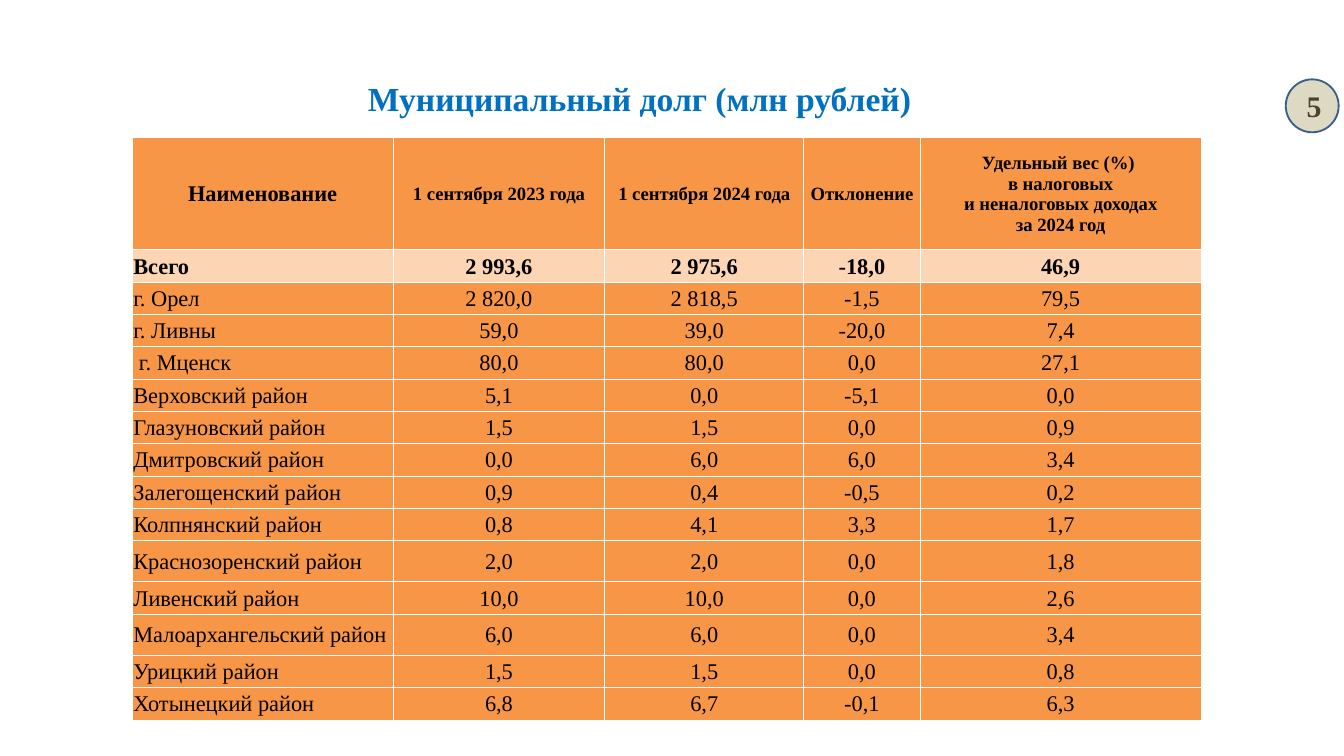
from copy import deepcopy

from lxml.etree import SubElement
from pptx import Presentation
from pptx.dml.color import RGBColor
from pptx.enum.shapes import MSO_SHAPE as Shape
from pptx.enum.text import MSO_ANCHOR as Anchor, PP_ALIGN as Align
from pptx.oxml.ns import qn
from pptx.util import Cm, Pt

FONT = "Times New Roman"
ORANGE, PEACH = "F79646", "FCD5B5"
TITLE = "Муниципальный долг (млн рублей)"
PAGE_NUMBER = "5"
HEADERS = [
    "Наименование", "1 сентября 2023 года", "1 сентября 2024 года", "Отклонение",
    "Удельный вес (%) \nв налоговых\nи неналоговых доходах\nза 2024 год",
]
DEBTS = [
    ("Всего", "2 993,6", "2 975,6", "-18,0", "46,9"),
    ("г. Орел", "2 820,0", "2 818,5", "-1,5", "79,5"),
    ("г. Ливны", "59,0", "39,0", "-20,0", "7,4"),
    (" г. Мценск", "80,0", "80,0", "0,0", "27,1"),
    ("Верховский район", "5,1", "0,0", "-5,1", "0,0"),
    ("Глазуновский район", "1,5", "1,5", "0,0", "0,9"),
    ("Дмитровский район", "0,0", "6,0", "6,0", "3,4"),
    ("Залегощенский район", "0,9", "0,4", "-0,5", "0,2"),
    ("Колпнянский район", "0,8", "4,1", "3,3", "1,7"),
    ("Краснозоренский район", "2,0", "2,0", "0,0", "1,8"),
    ("Ливенский район", "10,0", "10,0", "0,0", "2,6"),
    ("Малоархангельский район", "6,0", "6,0", "0,0", "3,4"),
    ("Урицкий район", "1,5", "1,5", "0,0", "0,8"),
    ("Хотынецкий район", "6,8", "6,7", "-0,1", "6,3"),
]
COLUMN_WIDTHS = [4.93, 4, 3.76, 2.2, 5.31]
HEADER_HEIGHT, ROW_HEIGHT, TALL_HEIGHT = 2.12, 0.61, 0.78
TALL_ROWS = {"Краснозоренский район", "Малоархангельский район"}


def color(value):
    return RGBColor.from_string(value)


def write(frame, text, size=12, ink="000000", bold=False, align=Align.CENTER):
    para = frame.paragraphs[0]
    para.text = text
    para.alignment = align
    for span in para.runs:
        span.font.name = FONT
        span.font.size = Pt(size)
        span.font.bold = bold
        span.font.color.rgb = color(ink)
    # Line breaks need the run format too, or they get the default height
    for line_break in para._p.findall(qn("a:br")):
        line_break.append(deepcopy(para.runs[0]._r.rPr))


def style_cell(cell, fill):
    """Set the thin white borders, the fill and the narrow margins."""
    properties = cell._tc.get_or_add_tcPr()
    for side in ("lnL", "lnR", "lnT", "lnB"):
        border = SubElement(properties, qn(f"a:{side}"), w=str(Pt(0.5)))
        SubElement(SubElement(border, qn("a:solidFill")), qn("a:srgbClr"), val="FFFFFF")
    cell.fill.solid()
    cell.fill.fore_color.rgb = color(fill)
    cell.vertical_anchor = Anchor.MIDDLE
    cell.margin_left = cell.margin_right = cell.margin_top = Cm(0.02)
    cell.margin_bottom = 0


def add_title(page):
    title = page.shapes.title
    title.left, title.top, title.width, title.height = Cm(6.7), Cm(1.35), Cm(13.6), Cm(1.02)
    title.text_frame.vertical_anchor = Anchor.TOP
    write(title.text_frame, TITLE, size=18, ink="0070C0", bold=True, align=Align.LEFT)


def add_page_number(page):
    badge = page.shapes.add_shape(Shape.OVAL, Cm(24.3), Cm(1.5), Cm(1), Cm(1))
    badge.shadow.inherit = False
    badge.fill.solid()
    badge.fill.fore_color.rgb = color("DDD9C3")
    badge.line.color.rgb = color("3A5F8C")
    badge.line.width = Pt(1)
    badge.text_frame.vertical_anchor = Anchor.MIDDLE
    write(badge.text_frame, PAGE_NUMBER, size=16, ink="4A452A", bold=True)


def add_debt_table(page):
    rows = [HEADERS, *DEBTS]
    heights = [HEADER_HEIGHT] + [
        TALL_HEIGHT if name in TALL_ROWS else ROW_HEIGHT for name, *_ in DEBTS]
    table = page.shapes.add_table(
        len(rows), len(HEADERS), Cm(2.5), Cm(2.6),
        Cm(sum(COLUMN_WIDTHS)), Cm(sum(heights))).table
    for column, width in zip(table.columns, COLUMN_WIDTHS):
        column.width = Cm(width)
    for r, (values, height) in enumerate(zip(rows, heights)):
        table.rows[r].height = Cm(height)
        for c, value in enumerate(values):
            cell = table.cell(r, c)
            style_cell(cell, PEACH if r == 1 else ORANGE)
            write(cell.text_frame, value,
                  size=10 if r == 0 and c > 0 else 12,
                  bold=r < 2,
                  align=Align.LEFT if r > 0 and c == 0 else Align.CENTER)


def main():
    deck = Presentation()
    deck.slide_width, deck.slide_height = Cm(25.4), Cm(14.28)
    page = deck.slides.add_slide(deck.slide_layouts[5])
    add_title(page)
    add_page_number(page)
    add_debt_table(page)
    deck.save("out.pptx")


if __name__ == "__main__":
    main()
